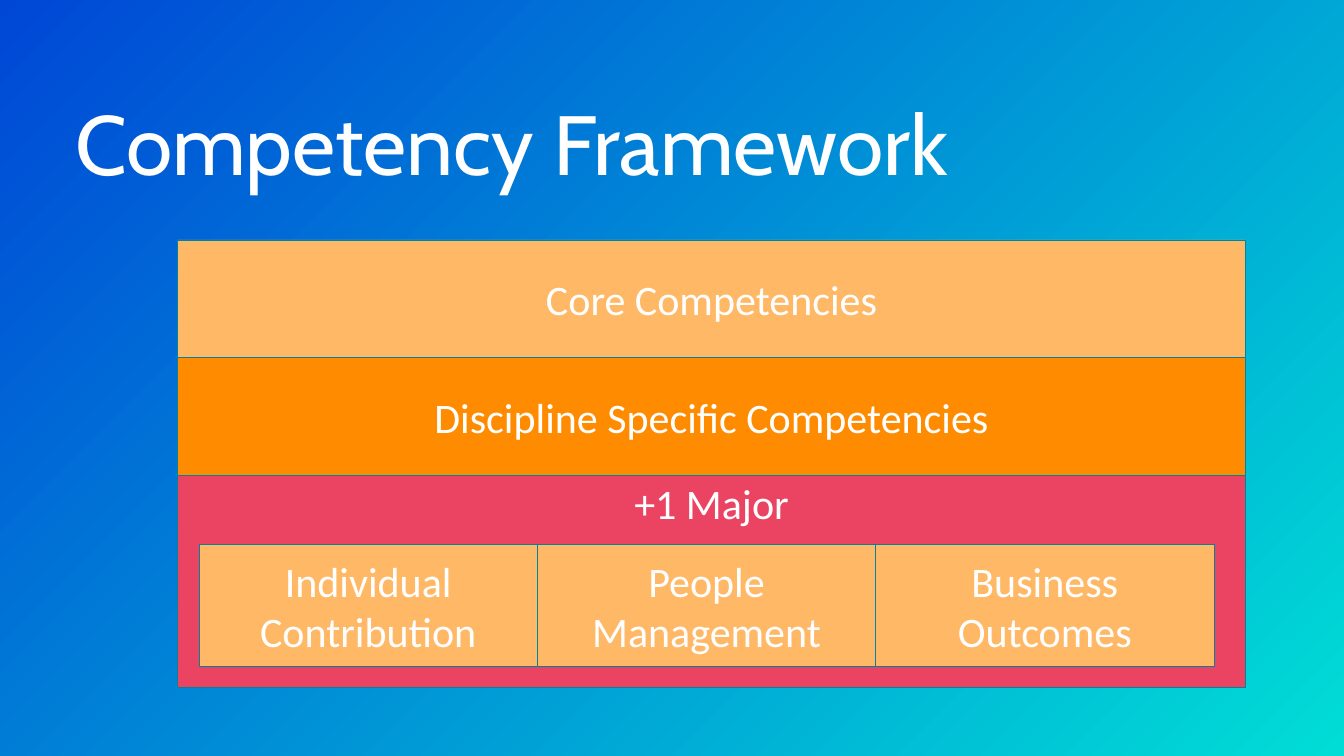
from dataclasses import dataclass

from lxml import etree
from pptx import Presentation
from pptx.dml.color import RGBColor
from pptx.enum import shapes, text
from pptx.oxml.ns import qn
from pptx.util import Inches, Pt


@dataclass(frozen=True)
class Theme:
    white: str = "FFFFFF"
    peach: str = "FFB866"
    orange: str = "FF8B00"
    pink: str = "EB4463"
    outline: str = "00849E"
    glow: str = "00DDD6"
    deep: str = "0047D6"
    title_font: str = "Cabin"
    body_font: str = "Calibri"
    title_size: int = 120
    body_size: int = 60


THEME = Theme()
MIDDLE, TOP = text.MSO_ANCHOR.MIDDLE, text.MSO_ANCHOR.TOP
CENTER, LEFT = text.PP_ALIGN.CENTER, text.PP_ALIGN.LEFT


def paint_background(slide):
    fill = slide.background.fill
    fill.gradient()
    for stop, position, color in zip(fill.gradient_stops, (0, 1), (THEME.glow, THEME.deep)):
        stop.position = position
        stop.color.rgb = RGBColor.from_string(color)
    grad = slide.element.find(".//" + qn("a:gradFill"))
    for lin in grad.findall(qn("a:lin")):
        grad.remove(lin)
    radial = etree.Element(qn("a:path"), {"path": "circle"})
    etree.SubElement(radial, qn("a:fillToRect"), {"l": "100000", "t": "100000"})
    grad.find(qn("a:gsLst")).addnext(radial)


def write_text(sp, lines, font, size, align, anchor):
    tf = sp.text_frame
    tf.word_wrap = True
    tf.vertical_anchor = anchor
    tf.text = "\n".join(lines)
    formats = {"name": font, "size": Pt(size)}
    for p in tf.paragraphs:
        p.alignment = align
        for r in p.runs:
            for name, value in formats.items():
                setattr(r.font, name, value)
            r.font.color.rgb = RGBColor.from_string(THEME.white)


def add_title(slide, box, title):
    sp = slide.shapes.add_textbox(*map(Inches, box))
    write_text(sp, [title], THEME.title_font, THEME.title_size, LEFT, MIDDLE)


def add_block(slide, box, lines, color, anchor=MIDDLE):
    sp = slide.shapes.add_shape(shapes.MSO_SHAPE.RECTANGLE, *map(Inches, box))
    sp.shadow.inherit = False
    sp.fill.solid()
    sp.fill.fore_color.rgb = RGBColor.from_string(color)
    sp.line.color.rgb = RGBColor.from_string(THEME.outline)
    sp.line.width = Pt(1)
    write_text(sp, lines, THEME.body_font, THEME.body_size, CENTER, anchor)


def add_major(slide, box, heading, tracks):
    left, top, width, height = box
    add_block(slide, box, [heading], THEME.pink, TOP)
    track_width = 6.71
    for i, lines in enumerate(tracks):
        track = (left + 0.43 + i * track_width, top + 1.37, track_width, 2.43)
        add_block(slide, track, lines, THEME.peach)


def add_framework(slide, box, layers, heading, tracks):
    left, top, width, height = box
    layer_height = 2.335
    for i, (label, color) in enumerate(layers):
        add_block(slide, (left, top + i * layer_height, width, layer_height), [label], color)
    used = len(layers) * layer_height
    add_major(slide, (left, top + used, width, height - used), heading, tracks)


def main():
    prs = Presentation()
    prs.slide_width, prs.slide_height = Inches(26.66), Inches(15)
    slide = prs.slides.add_slide(prs.slide_layouts[6])
    paint_background(slide)
    add_title(slide, (1.4, 1.37, 21.94, 2.9), "Competency Framework")
    add_framework(
        slide,
        (3.52, 4.76, 21.19, 8.87),
        [("Core Competencies", THEME.peach), ("Discipline Specific Competencies", THEME.orange)],
        "+1 Major",
        [("Individual", "Contribution"), ("People", "Management"), ("Business", "Outcomes")],
    )
    prs.save("out.pptx")


if __name__ == "__main__":
    main()
